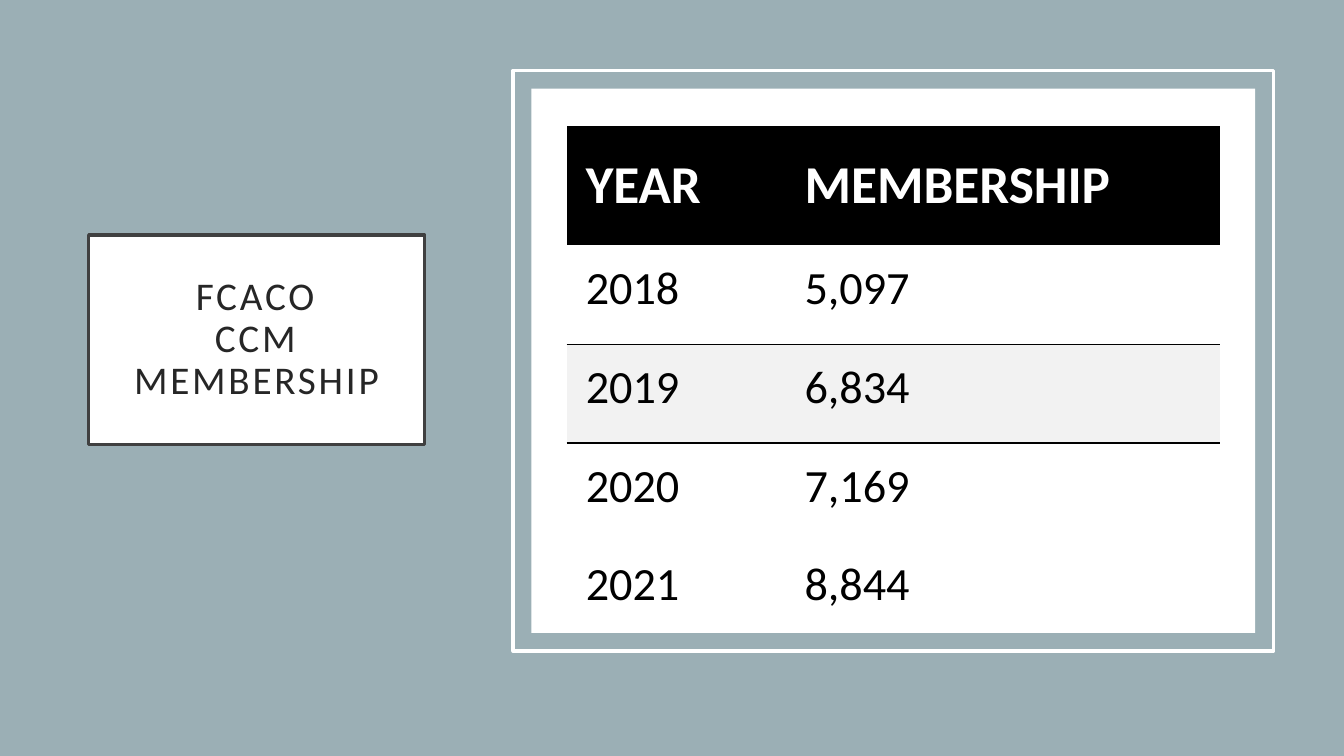
import pptx
import pptx.dml.color
import pptx.enum.shapes
import pptx.enum.text
import pptx.oxml
import pptx.oxml.ns
import pptx.util
from pptx.util import Inches

FONT = "Calibri"
PLAIN_TABLE_STYLE = "{2D5ABB26-0587-4C30-8999-92F81FD0307C}"
MEMBERSHIP = [
    ("YEAR", "MEMBERSHIP"),
    ("2018", "5,097"),
    ("2019", "6,834"),
    ("2020", "7,169"),
    ("2021", "8,844"),
]


def color(hex_string):
    return pptx.dml.color.RGBColor.from_string(hex_string)


def set_fill(fill, hex_string=None):
    if hex_string is None:
        fill.background()
    else:
        fill.solid()
        fill.fore_color.rgb = color(hex_string)


def set_line(line, hex_string, width=2.5):
    line.color.rgb = color(hex_string)
    line.width = pptx.util.Pt(width)


def write_text(text_frame, text, size, hex_string, bold=False, align=None,
               line_spacing=None, letter_spacing=None):
    """Fill a text frame; a vertical tab in the text is a line break."""
    text_frame.text = text
    paragraph = text_frame.paragraphs[0]
    paragraph.alignment = align
    paragraph.line_spacing = line_spacing
    for run in paragraph.runs:
        run.font.name = FONT
        run.font.size = pptx.util.Pt(size)
        run.font.bold = bold
        run.font.color.rgb = color(hex_string)
        if letter_spacing:
            run.font._element.set("spc", str(letter_spacing * 100))


def add_title(slide, left, top, width, height):
    title = slide.shapes.title
    title.left, title.top = Inches(left), Inches(top)
    title.width, title.height = Inches(width), Inches(height)
    set_fill(title.fill, "FFFFFF")
    set_line(title.line, "404040")
    text_frame = title.text_frame
    write_text(text_frame, "FCACO\vCCM MEMBERSHIP", 28, "262626",
               align=pptx.enum.text.PP_ALIGN.CENTER,
               line_spacing=0.9, letter_spacing=2)
    text_frame.word_wrap = True
    text_frame.auto_size = pptx.enum.text.MSO_AUTO_SIZE.NONE
    text_frame.vertical_anchor = pptx.enum.text.MSO_ANCHOR.MIDDLE
    text_frame.margin_left = text_frame.margin_right = Inches(0.3)
    text_frame.margin_top = text_frame.margin_bottom = Inches(0.2)


def add_panel(slide, left, top, width, height, gap=0.18):
    """Draw an outlined frame with a white panel inset by the gap."""
    for inset in (0, gap):
        shape = slide.shapes.add_shape(
            pptx.enum.shapes.MSO_SHAPE.RECTANGLE,
            Inches(left + inset), Inches(top + inset),
            Inches(width - 2 * inset), Inches(height - 2 * inset))
        shape.shadow.inherit = False
        if inset:
            set_fill(shape.fill, "FFFFFF")
            shape.line.fill.background()
        else:
            set_fill(shape.fill)
            set_line(shape.line, "FFFFFF")


def add_cell_border(cell, side, hex_string, width=1):
    border = pptx.oxml.parse_xml(
        f'<a:ln{side} {pptx.oxml.ns.nsdecls("a")} w="{pptx.util.Pt(width)}">'
        f'<a:solidFill><a:srgbClr val="{hex_string}"/></a:solidFill>'
        f'</a:ln{side}>')
    cell._tc.get_or_add_tcPr().insert(0, border)


def format_cell(cell, text, row_index):
    header = row_index == 0
    cell.margin_left, cell.margin_right = Inches(0.19), Inches(0.14)
    cell.margin_top = Inches(0.27 if header else 0.15)
    cell.margin_bottom = Inches(0.27)
    if header:
        cell.vertical_anchor = pptx.enum.text.MSO_ANCHOR.MIDDLE
        write_text(cell.text_frame, text, 38, "FFFFFF", bold=True)
    else:
        write_text(cell.text_frame, text, 33, "000000")
    set_fill(cell.fill, {0: "000000", 2: "F2F2F2"}.get(row_index))
    # A rule separates the first two years
    side = {1: "B", 2: "T"}.get(row_index)
    if side:
        add_cell_border(cell, side, "000000")


def add_membership_table(slide, left, top, width, height,
                         year_width=2.17, header_height=1.14):
    table = slide.shapes.add_table(
        len(MEMBERSHIP), 2, Inches(left), Inches(top),
        Inches(width), Inches(height)).table
    table.first_row = table.horz_banding = False
    style = table._tbl.tblPr.find(pptx.oxml.ns.qn("a:tableStyleId"))
    style.text = PLAIN_TABLE_STYLE
    table.columns[0].width = Inches(year_width)
    table.columns[1].width = Inches(width - year_width)
    year_height = (height - header_height) / (len(MEMBERSHIP) - 1)
    for row_index, values in enumerate(MEMBERSHIP):
        table.rows[row_index].height = Inches(
            year_height if row_index else header_height)
        for column_index, text in enumerate(values):
            format_cell(table.cell(row_index, column_index), text, row_index)


def main():
    presentation = pptx.Presentation()
    presentation.slide_width = Inches(13.33)
    presentation.slide_height = Inches(7.5)
    slide = presentation.slides.add_slide(presentation.slide_layouts[5])
    set_fill(slide.background.fill, "9BAFB5")

    # Title box on the left
    add_title(slide, 0.88, 2.33, 3.33, 2.08)
    # Framed table on the right
    add_panel(slide, 5.09, 0.7, 7.54, 5.76)
    add_membership_table(slide, 5.62, 1.25, 6.48, 4.9)

    presentation.save("out.pptx")


if __name__ == "__main__":
    main()
